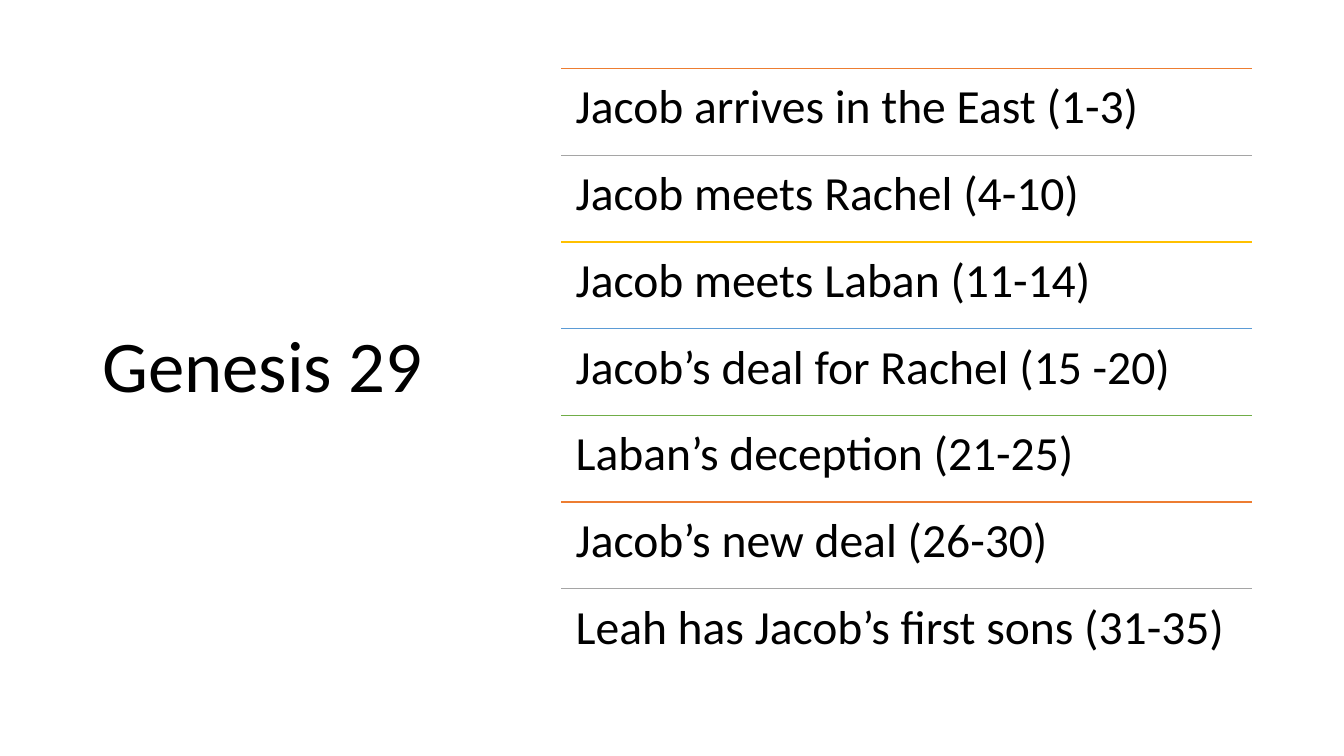
from itertools import cycle

from lxml import etree
from pptx import Presentation
from pptx import util as u
from pptx.dml import color
from pptx.enum import shapes, text
from pptx.oxml import ns

COLORS = {
    "ink": "000000",
    "orange": "ED7D31",
    "gray": "A5A5A5",
    "gold": "FFC000",
    "blue": "5B9BD5",
    "green": "70AD47",
}
RULE_ORDER = ("orange", "gray", "gold", "blue", "green")
PASSAGES = (
    "Jacob arrives in the East (1-3)",
    "Jacob meets Rachel (4-10)",
    "Jacob meets Laban (11-14)",
    "Jacob’s deal for Rachel (15 -20)",
    "Laban’s deception (21-25)",
    "Jacob’s new deal (26-30)",
    "Leah has Jacob’s first sons (31-35)",
)
OUTLINE_LEFT, OUTLINE_TOP = 401, 49
OUTLINE_WIDTH, ROW_HEIGHT = 493.2, 61.92


def rgb(name):
    return color.RGBColor.from_string(COLORS[name])


def write(frame, words, size, font="Calibri", ink="ink", spacing=0.9):
    paragraph = frame.paragraphs[0]
    paragraph.alignment = text.PP_ALIGN.LEFT
    paragraph.line_spacing = spacing
    run = paragraph.add_run()
    run.text = words
    run.font.name = font
    run.font.size = u.Pt(size)
    run.font.color.rgb = rgb(ink)


class ChapterSlide:
    """Draws the chapter title and its ruled outline on one slide."""

    def __init__(self, slide):
        self.slide = slide

    def label(self, words, left, top, width, height, size, inset, anchor):
        box = self.slide.shapes.add_textbox(
            u.Pt(left), u.Pt(top), u.Pt(width), u.Pt(height)
        )
        frame = box.text_frame
        frame.word_wrap = True
        frame.vertical_anchor = anchor
        frame.margin_left = frame.margin_right = u.Pt(inset[0])
        frame.margin_top = frame.margin_bottom = u.Pt(inset[1])
        write(frame, words, size=size)

    def rule(self, left, top, width, hue):
        line = self.slide.shapes.add_connector(
            shapes.MSO_CONNECTOR.STRAIGHT,
            u.Pt(left), u.Pt(top), u.Pt(left + width), u.Pt(top),
        )
        line.line.color.rgb = rgb(hue)
        line.line.width = u.Pt(1)
        etree.SubElement(line._element.spPr, ns.qn("a:effectLst"))


def main():
    deck = Presentation()
    deck.slide_width, deck.slide_height = u.Pt(960), u.Pt(540)
    chapter = ChapterSlide(deck.slides.add_slide(deck.slide_layouts[6]))

    chapter.label("Genesis 29", 66, 44, 266, 438.5, size=52,
                  inset=(7.2, 3.6), anchor=text.MSO_ANCHOR.MIDDLE)
    for row, (passage, hue) in enumerate(zip(PASSAGES, cycle(RULE_ORDER))):
        top = OUTLINE_TOP + row * ROW_HEIGHT
        chapter.rule(OUTLINE_LEFT, top, OUTLINE_WIDTH, hue)
        chapter.label(passage, OUTLINE_LEFT, top, OUTLINE_WIDTH, ROW_HEIGHT,
                      size=34, inset=(10.2, 10.2), anchor=text.MSO_ANCHOR.TOP)

    deck.save("out.pptx")


if __name__ == "__main__":
    main()
